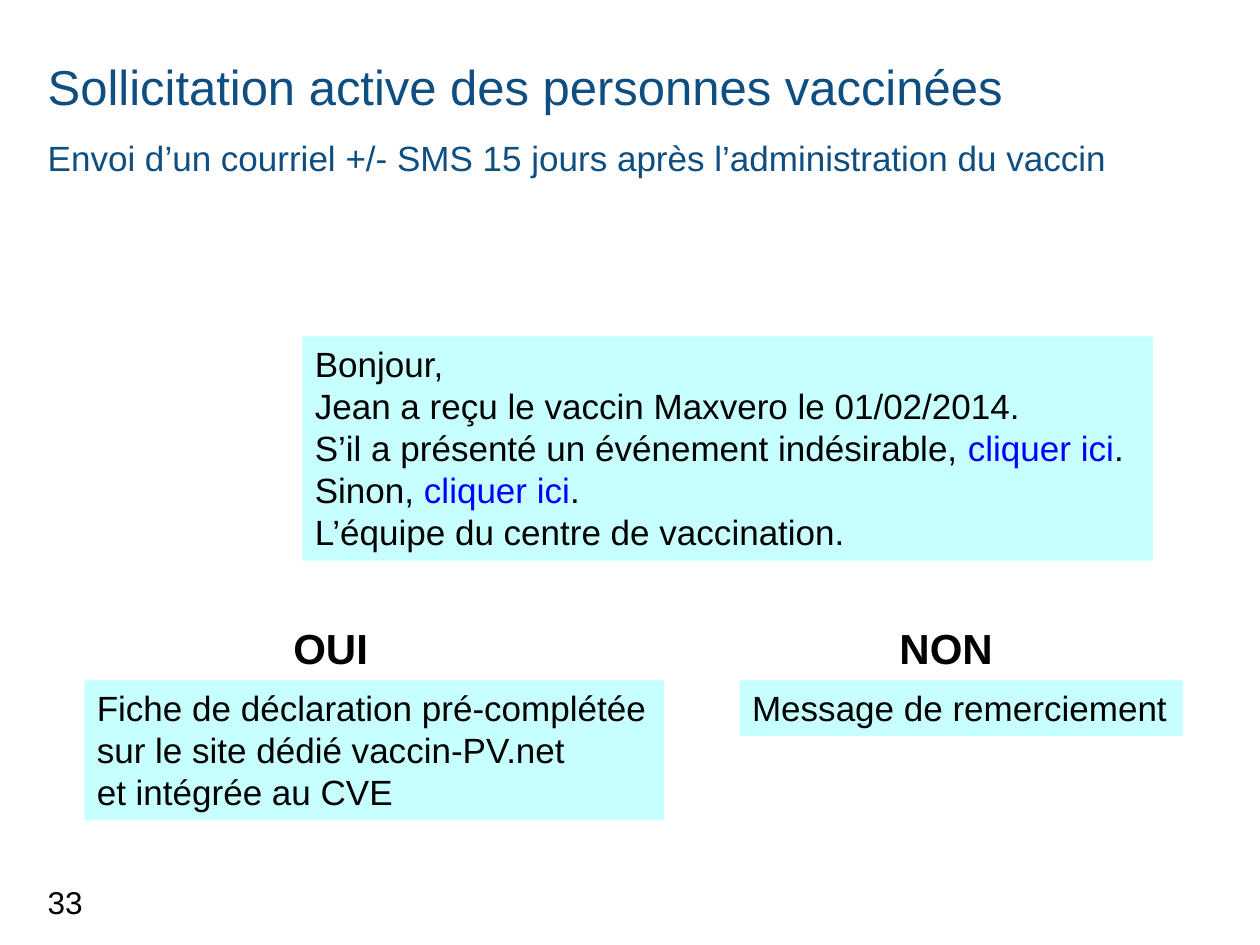
from pptx import Presentation
from pptx.dml.color import RGBColor
from pptx.enum.shapes import MSO_SHAPE
from pptx.enum.text import MSO_ANCHOR, MSO_AUTO_SIZE, PP_ALIGN
from pptx.util import Inches, Pt

RECTANGLE = MSO_SHAPE.RECTANGLE
TOP, MIDDLE = MSO_ANCHOR.TOP, MSO_ANCHOR.MIDDLE
GROW = MSO_AUTO_SIZE.SHAPE_TO_FIT_TEXT
LEFT = PP_ALIGN.LEFT
FONT = "Arial"
COLORS = {
    "title": "0F4E80",
    "text": "000000",
    "link": "0000FF",
    "message": "C7FFFF",
    "white": "FFFFFF",
}
LINK = "cliquer ici"


def rgb(name):
    return RGBColor.from_string(COLORS[name])


def style(font, size, color="text", bold=False):
    font.name = FONT
    font.size = Pt(size)
    font.color.rgb = rgb(color)
    font.bold = bold


def add_title(slide, box, heading, subheading):
    frame = slide.shapes.add_textbox(*map(Inches, box)).text_frame
    frame.word_wrap = True
    frame.vertical_anchor = MIDDLE
    title = frame.paragraphs[0]
    title.line_spacing = 1.5
    heading_run = title.add_run()
    heading_run.text = heading
    style(heading_run.font, 28, "title")
    title.add_line_break()
    subheading_run = title.add_run()
    subheading_run.text = subheading
    style(subheading_run.font, 20, "title")


def add_page_number(slide, box, number):
    frame = slide.shapes.add_textbox(*map(Inches, box)).text_frame
    frame.word_wrap = True
    frame.text = number
    style(frame.paragraphs[0].font, 18)


def add_message(slide, box, lines, size=20, bold=False, fill="message"):
    if fill:
        message = slide.shapes.add_shape(RECTANGLE, *map(Inches, box))
        message.shadow.inherit = False
        message.fill.solid()
        message.fill.fore_color.rgb = rgb(fill)
        message.line.fill.background()
    else:
        message = slide.shapes.add_textbox(*map(Inches, box))
    frame = message.text_frame
    frame.word_wrap = False
    frame.auto_size = GROW
    frame.vertical_anchor = TOP
    for index, line in enumerate(lines):
        paragraph = frame.add_paragraph() if index else frame.paragraphs[0]
        paragraph.alignment = LEFT
        before, link, after = line.partition(LINK)
        paragraph.text = before
        style(paragraph.font, size, bold=bold)
        if link:
            link_run = paragraph.add_run()
            link_run.text = link
            link_run.font.color.rgb = rgb("link")
            paragraph.add_run().text = after


def add_answer(slide, label_box, label, label_fill, message_box, message):
    add_message(slide, label_box, [label], size=24, bold=True, fill=label_fill)
    add_message(slide, message_box, [message])


def main():
    deck = Presentation()
    deck.slide_width, deck.slide_height = Inches(10), Inches(7.5)
    slide = deck.slides.add_slide(deck.slide_layouts[6])

    add_title(
        slide,
        (0.28, 0.16, 9.45, 1.31),
        "Sollicitation active des personnes vaccinées",
        "Envoi d’un courriel +/- SMS 15 jours après l’administration du vaccin",
    )
    add_page_number(slide, (0.28, 6.96, 0.94, 0.54), "33")
    add_message(
        slide,
        (2.4, 2.67, 6.75, 1.78),
        [
            "Bonjour,",
            "Jean a reçu le vaccin Maxvero le 01/02/2014.",
            f"S’il a présenté un événement indésirable, {LINK}.",
            f"Sinon, {LINK}.",
            "L’équipe du centre de vaccination.",
        ],
    )
    add_answer(
        slide,
        (2.23, 4.89, 0.8, 0.5),
        "OUI",
        None,
        (0.67, 5.4, 4.6, 1.11),
        "Fiche de déclaration pré-complétée\v"
        "sur le site dédié vaccin-PV.net\v"
        "et intégrée au CVE",
    )
    add_answer(
        slide,
        (7.04, 4.89, 0.95, 0.5),
        "NON",
        "white",
        (5.87, 5.4, 3.52, 0.44),
        "Message de remerciement",
    )
    deck.save("out.pptx")


if __name__ == "__main__":
    main()
